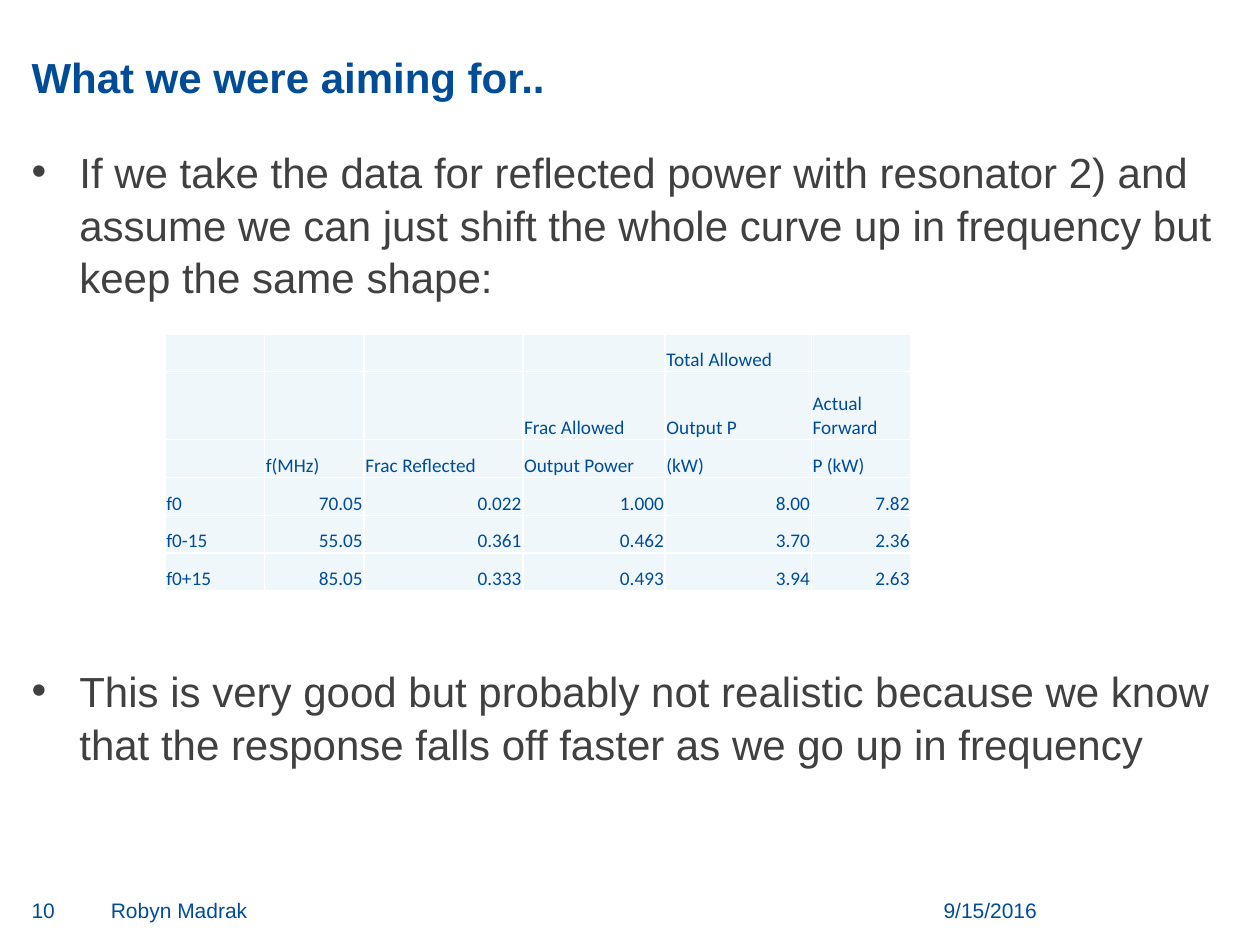
from dataclasses import dataclass

from lxml import etree
from pptx import Presentation
from pptx.dml.color import RGBColor
from pptx.enum.text import MSO_ANCHOR, MSO_AUTO_SIZE, PP_ALIGN
from pptx.oxml.ns import qn
from pptx.util import Inches, Pt

BLUE = RGBColor(0x00, 0x4C, 0x97)
GRAY = RGBColor(0x40, 0x40, 0x40)
PALE_BLUE = RGBColor(0xEF, 0xF7, 0xFB)
WHITE = RGBColor(0xFF, 0xFF, 0xFF)
LEFT, RIGHT = PP_ALIGN.LEFT, PP_ALIGN.RIGHT
TOP, BOTTOM = MSO_ANCHOR.TOP, MSO_ANCHOR.BOTTOM
NO_AUTOFIT = MSO_AUTO_SIZE.NONE


@dataclass
class FooterItem:
    text: str
    left: float
    width: float
    align: PP_ALIGN = LEFT


@dataclass
class Bullet:
    text: str
    space_before: float


BULLETS = [
    Bullet("If we take the data for reflected power with resonator 2) and assume "
           "we can just shift the whole curve up in frequency but keep the same shape:", 0),
    # The gap leaves room for the table
    Bullet("This is very good but probably not realistic because we know that "
           "the response falls off faster as we go up in frequency", 206),
]
FOOTER = [
    FooterItem("9/15/2016", 7.05, 1.18, RIGHT),
    FooterItem("Robyn Madrak", 0.88, 5.88),
    FooterItem("10", 0.25, 0.49),
]
HEADER_ROWS = 3
POWER_ROWS = [
    ["", "", "", "", "Total Allowed", ""],
    ["", "", "", "Frac Allowed", "Output P", "Actual Forward"],
    ["", "f(MHz)", "Frac Reflected", "Output Power", "(kW)", "P (kW)"],
    ["f0", "70.05", "0.022", "1.000", "8.00", "7.82"],
    ["f0-15", "55.05", "0.361", "0.462", "3.70", "2.36"],
    ["f0+15", "85.05", "0.333", "0.493", "3.94", "2.63"],
]
COLUMN_WIDTHS = [0.79, 0.79, 1.26, 1.13, 1.16, 0.79]
ROW_HEIGHTS = [0.3, 0.54, 0.3, 0.3, 0.3, 0.3]


def place(shape, left: float, top: float, width: float, height: float) -> None:
    shape.left, shape.top = Inches(left), Inches(top)
    shape.width, shape.height = Inches(width), Inches(height)


def prepare_frame(frame, anchor: MSO_ANCHOR) -> None:
    frame.word_wrap = True
    frame.auto_size = NO_AUTOFIT
    frame.vertical_anchor = anchor
    frame.margin_left = frame.margin_right = 0
    frame.margin_top = frame.margin_bottom = 0


def set_font(paragraph, size: float, color: RGBColor, name: str = "Arial",
             bold: bool = False) -> None:
    font = paragraph.font
    font.name, font.size, font.bold = name, Pt(size), bold
    font.color.rgb = color


def add_bullet(paragraph, bullet: Bullet) -> None:
    paragraph.text = bullet.text
    paragraph.line_spacing = 1.05
    paragraph.space_before = Pt(bullet.space_before)
    properties = paragraph._p.get_or_add_pPr()
    properties.set("marL", str(Inches(0.38)))
    properties.set("indent", str(-Inches(0.38)))
    etree.SubElement(properties, qn("a:buFont"), typeface="Arial")
    etree.SubElement(properties, qn("a:buChar"), char="•")
    set_font(paragraph, 24, GRAY)


def add_footer_item(slide, item: FooterItem) -> None:
    box = slide.shapes.add_textbox(Inches(item.left), Inches(7.12),
                                   Inches(item.width), Inches(0.26))
    prepare_frame(box.text_frame, TOP)
    paragraph = box.text_frame.paragraphs[0]
    paragraph.text, paragraph.alignment = item.text, item.align
    set_font(paragraph, 12, BLUE)


def set_borders(cell) -> None:
    properties = cell._tc.get_or_add_tcPr()
    for index, side in enumerate(("lnL", "lnR", "lnT", "lnB")):
        line = etree.Element(qn(f"a:{side}"), w=str(Pt(1)))
        fill = etree.SubElement(line, qn("a:solidFill"))
        etree.SubElement(fill, qn("a:srgbClr"), val=str(WHITE))
        properties.insert(index, line)


def fill_cell(cell, text: str, align: PP_ALIGN) -> None:
    cell.fill.solid()
    cell.fill.fore_color.rgb = PALE_BLUE
    cell.vertical_anchor = BOTTOM
    cell.margin_left = cell.margin_right = cell.margin_top = Inches(0.01)
    cell.margin_bottom = 0
    set_borders(cell)
    paragraph = cell.text_frame.paragraphs[0]
    paragraph.text, paragraph.alignment = text, align
    set_font(paragraph, 11, BLUE, "Calibri")
    if not text:  # keeps empty cells from stretching their row
        etree.SubElement(paragraph._p, qn("a:endParaRPr"), sz="1100")


def add_power_table(slide) -> None:
    table = slide.shapes.add_table(
        len(POWER_ROWS), len(COLUMN_WIDTHS), Inches(1.31), Inches(2.65),
        Inches(sum(COLUMN_WIDTHS)), Inches(sum(ROW_HEIGHTS))).table
    table.first_row = table.horz_banding = False
    for column, width in zip(table.columns, COLUMN_WIDTHS):
        column.width = Inches(width)
    for row, height in zip(table.rows, ROW_HEIGHTS):
        row.height = Inches(height)
    for r, values in enumerate(POWER_ROWS):
        for c, value in enumerate(values):
            is_number = r >= HEADER_ROWS and c > 0
            fill_cell(table.cell(r, c), value, RIGHT if is_number else LEFT)


def main() -> None:
    prs = Presentation()
    prs.slide_width, prs.slide_height = Inches(10), Inches(7.5)
    slide = prs.slides.add_slide(prs.slide_layouts[1])

    # Title
    title = slide.shapes.title
    place(title, 0.25, 0.11, 9.5, 0.7)
    prepare_frame(title.text_frame, BOTTOM)
    heading = title.text_frame.paragraphs[0]
    heading.text, heading.alignment = "What we were aiming for..", LEFT
    set_font(heading, 24, BLUE, bold=True)

    # Bullets above and below the table
    body = slide.placeholders[1]
    place(body, 0.25, 1.14, 9.48, 5.45)
    frame = body.text_frame
    prepare_frame(frame, TOP)
    for index, bullet in enumerate(BULLETS):
        add_bullet(frame.add_paragraph() if index else frame.paragraphs[0], bullet)

    # Footer
    for item in FOOTER:
        add_footer_item(slide, item)

    # Power table
    add_power_table(slide)

    prs.save("out.pptx")


if __name__ == "__main__":
    main()
